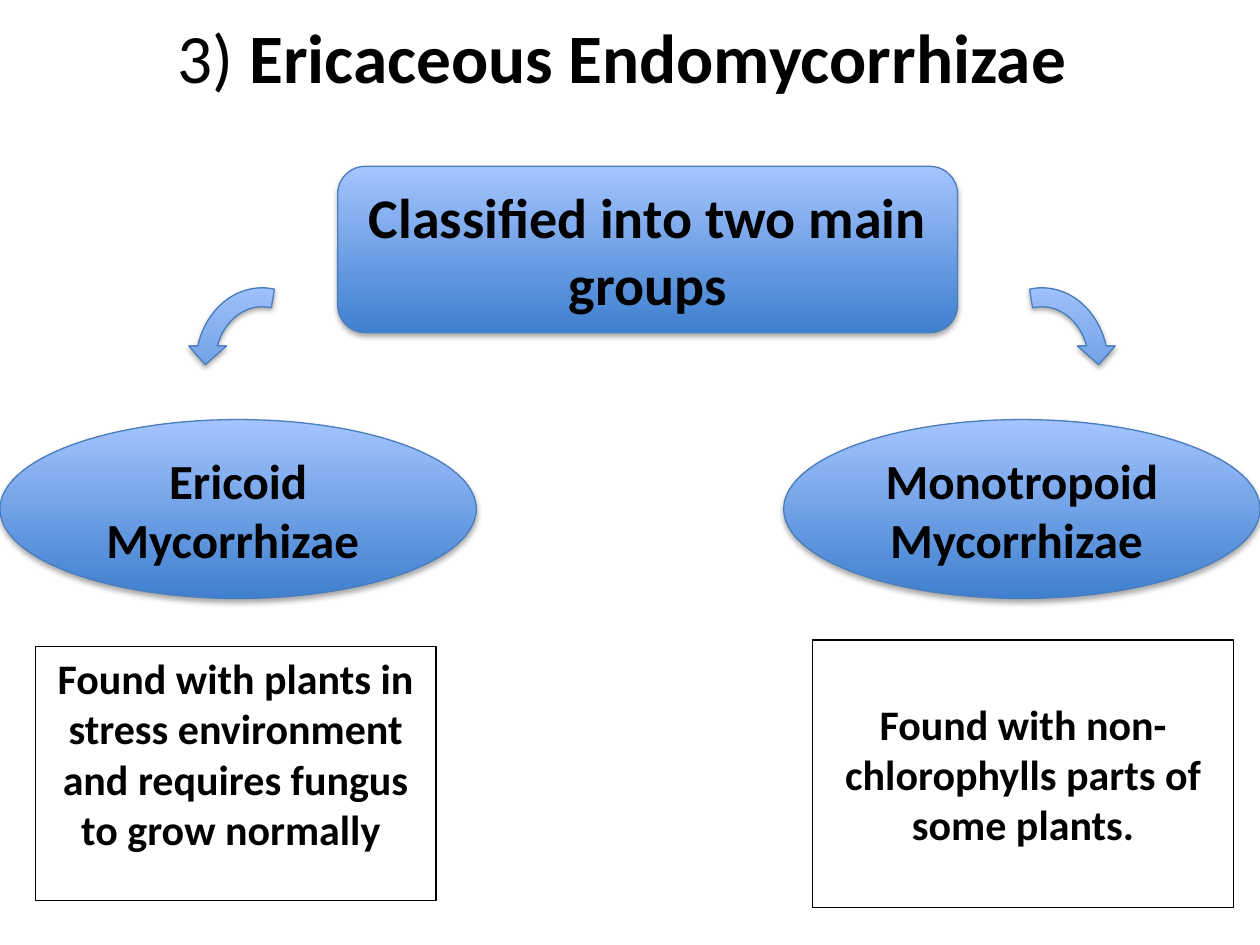
from lxml import etree
from pptx import Presentation
from pptx.dml.color import RGBColor
from pptx.enum.shapes import MSO_SHAPE
from pptx.enum.text import MSO_ANCHOR, MSO_AUTO_SIZE, PP_ALIGN
from pptx.oxml import parse_xml
from pptx.util import Inches, Pt

CENTER = PP_ALIGN.CENTER
TOP, MIDDLE = MSO_ANCHOR.TOP, MSO_ANCHOR.MIDDLE
ROUNDED, OVAL = MSO_SHAPE.ROUNDED_RECTANGLE, MSO_SHAPE.OVAL
RECT, ARROW = MSO_SHAPE.RECTANGLE, MSO_SHAPE.CIRCULAR_ARROW
NS = "http://schemas.openxmlformats.org/drawingml/2006/main"
FONT = "Calibri"
COLORS = {"text": "000000", "deep": "3F80CE", "light": "A4C4FF", "edge": "4B7EBC"}
ARROW_ADJUSTMENTS = (0.125, 11.42, 204.58, 156.4, 0.125)
SHADOW = (
    f'<a:effectLst xmlns:a="{NS}"><a:outerShdw blurRad="40000" dist="23000" '
    'dir="5400000" rotWithShape="0"><a:srgbClr val="000000">'
    '<a:alpha val="35000"/></a:srgbClr></a:outerShdw></a:effectLst>'
)


def color(name):
    """Return the named palette colour."""
    return RGBColor.from_string(COLORS[name])


def style_font(font, size, bold):
    """Set the slide's typeface with a size and weight."""
    font.name, font.size, font.bold = FONT, Pt(size), bold
    font.color.rgb = color("text")


def add_title(s, box, number, name):
    """Place the title with a light number and a bold name."""
    title = s.shapes.title
    title.left, title.top, title.width, title.height = map(Inches, box)
    tf = title.text_frame
    tf.word_wrap, tf.auto_size = True, MSO_AUTO_SIZE.NONE
    tf.vertical_anchor = MIDDLE
    p = tf.paragraphs[0]
    p.alignment = CENTER
    for text, bold in ((number, False), (name, True)):
        r = p.add_run()
        r.text = text
        style_font(r.font, 39.6, bold)
    p.add_line_break()


def add_outlined(s, kind, box, edge):
    """Add a shape with a thin outline and no inherited shadow."""
    sp = s.shapes.add_shape(kind, *map(Inches, box))
    sp.shadow.inherit = False
    sp.line.color.rgb = color(edge)
    sp.line.width = Pt(0.75)
    return sp


def add_glossy(s, kind, box):
    """Add a blue gradient shape with a soft shadow."""
    sp = add_outlined(s, kind, box, "edge")
    sp.fill.gradient()
    sp.fill.gradient_angle = 90
    for stop, name in zip(sp.fill.gradient_stops, ("deep", "light")):
        stop.color.rgb = color(name)
    props = sp._element.spPr
    props.replace(props.find(etree.QName(NS, "effectLst").text), parse_xml(SHADOW))
    return sp


def write(sp, text, size, anchor=MIDDLE):
    """Write centred bold text in a shape."""
    tf = sp.text_frame
    tf.word_wrap, tf.vertical_anchor = True, anchor
    p = tf.paragraphs[0]
    p.alignment = CENTER
    p.text = text
    style_font(p.font, size, True)


def add_arrow(s, box, flipped):
    """Add a curved arrow, mirrored for the left branch."""
    sp = add_glossy(s, ARROW, box)
    for i, value in enumerate(ARROW_ADJUSTMENTS):
        sp.adjustments[i] = value
    if flipped:
        sp._element.spPr.xfrm.set("flipH", "1")


def add_group(s, left, name, arrow_left, flipped, note_box, note, anchor):
    """Add one branch: its arrow, named ellipse and note."""
    write(add_glossy(s, OVAL, (left, 3.33, 3.78, 1.42)), name, 28)
    add_arrow(s, (arrow_left, 2.21, 1.2, 1.37), flipped)
    sp = add_outlined(s, RECT, note_box, "text")
    sp.fill.background()
    write(sp, note, 24, anchor)


def main():
    """Build and save the slide."""
    prs = Presentation()
    prs.slide_width, prs.slide_height = Inches(10), Inches(7.5)
    s = prs.slides.add_slide(prs.slide_layouts[5])
    add_title(s, (0.5, 0.3, 9, 1.02), "3) ", "Ericaceous Endomycorrhizae ")
    write(add_glossy(s, ROUNDED, (2.68, 1.32, 4.92, 1.32)),
          "Classified into two main groups", 32)
    add_group(s, 0, "Ericoid Mycorrhizae ", 1.48, True, (0.28, 5.13, 3.18, 2.02),
              "Found with plants in stress environment and requires fungus "
              "to grow normally ", TOP)
    add_group(s, 6.22, "Monotropoid Mycorrhizae ", 7.67, False,
              (6.45, 5.08, 3.34, 2.12),
              "Found with non-chlorophylls parts of some plants.", MIDDLE)
    prs.save("out.pptx")


if __name__ == "__main__":
    main()
